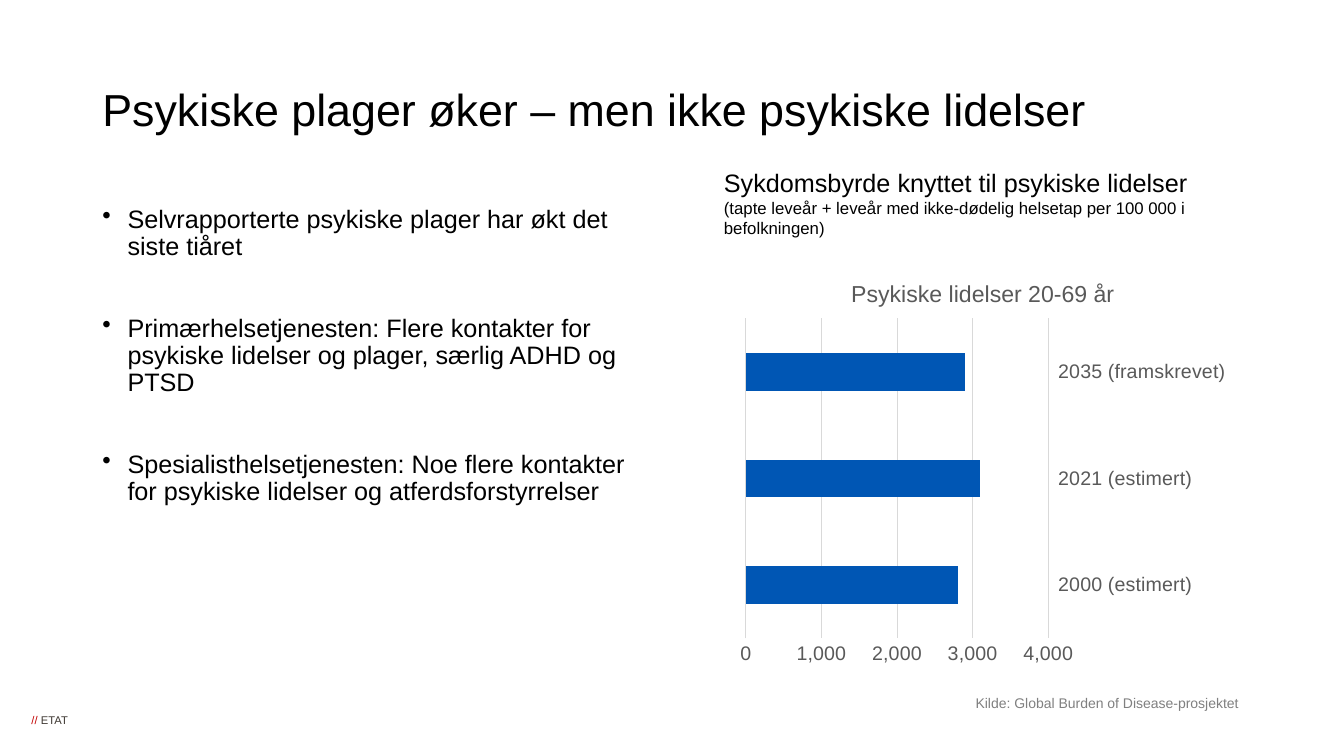
import pptx
import pptx.chart.data
import pptx.dml.color
import pptx.enum.chart
import pptx.enum.text
import pptx.oxml
import pptx.util
from dataclasses import dataclass

Pt = pptx.util.Pt
Color = pptx.dml.color.RGBColor.from_string


@dataclass(frozen=True)
class Theme:
    font: str = "Arial"
    ink: str = "000000"
    axis_ink: str = "595959"
    grid: str = "D9D9D9"
    bar: str = "0056B4"
    source_ink: str = "808080"
    mark: str = "C30000"
    footer_ink: str = "3E3832"
    title: float = 32
    body: float = 18
    chart_title: float = 16.5
    axis: float = 14
    unit: float = 12
    source: float = 10
    footer: float = 8


theme = Theme()


def style(font, size, color):
    font.name = theme.font
    font.size = Pt(size)
    font.bold = False
    font.color.rgb = Color(color)


def add_text(left, top, width, height, lines):
    """Add a wrapping text box; each line is (text, size, color)."""
    box = page.shapes.add_textbox(Pt(left), Pt(top), Pt(width), Pt(height))
    frame = box.text_frame
    frame.word_wrap = True
    for index, (text, size, color) in enumerate(lines):
        para = frame.add_paragraph() if index else frame.paragraphs[0]
        para.text = text
        style(para.font, size, color)
    return frame


deck = pptx.Presentation()
deck.slide_width, deck.slide_height = Pt(960), Pt(540)
page = deck.slides.add_slide(deck.slide_layouts[6])

# Footer mark
footer = add_text(19.5, 509.8, 180.5, 9.4, [("", theme.footer, theme.footer_ink)])
footer.margin_left = Pt(3)
footer.margin_top = footer.margin_right = footer.margin_bottom = 0
for text, color in (("// ", theme.mark), ("ETAT", theme.footer_ink)):
    span = footer.paragraphs[0].add_run()
    span.text = text
    span.font.color.rgb = Color(color)

# Title
title = add_text(66, 38.2, 828, 84.2, [
    ("Psykiske plager øker – men ikke psykiske lidelser", theme.title, theme.ink)])
title.vertical_anchor = pptx.enum.text.MSO_ANCHOR.MIDDLE
title.paragraphs[0].line_spacing = 0.9

# Bullet points
points = page.shapes.add_textbox(Pt(66), Pt(144), Pt(394), Pt(342.7)).text_frame
points.word_wrap = True
for index, text in enumerate((
        "Selvrapporterte psykiske plager har økt det siste tiåret",
        "Primærhelsetjenesten: Flere kontakter for psykiske lidelser og plager, "
        "særlig ADHD og PTSD",
        "Spesialisthelsetjenesten: Noe flere kontakter for psykiske lidelser "
        "og atferdsforstyrrelser")):
    para = points.add_paragraph() if index else points.paragraphs[0]
    para.text = text
    properties = para._p.get_or_add_pPr()
    properties.set("marL", str(Pt(18)))
    properties.set("indent", str(Pt(-18)))
    properties.append(pptx.oxml.parse_xml(
        '<a:buChar xmlns:a="http://schemas.openxmlformats.org/drawingml/2006/main" char="•"/>'))
    para.line_spacing = 0.9
    if index:
        para.space_before = Pt(39)
    style(para.font, theme.body, theme.ink)

# Chart heading and source
add_text(510, 116, 384, 58, [
    ("Sykdomsbyrde knyttet til psykiske lidelser", theme.body, theme.ink),
    ("(tapte leveår + leveår med ikke-dødelig helsetap per 100 000 i befolkningen)",
     theme.unit, theme.ink)])
add_text(689.8, 492.5, 223.2, 19.4, [
    ("Kilde: Global Burden of Disease-prosjektet", theme.source, theme.source_ink)])

# Bar chart
data = pptx.chart.data.CategoryChartData(number_format="#,##0")
data.categories = ["2000 (estimert)", "2021 (estimert)", "2035 (framskrevet)"]
data.add_series("Series 1", [2800, 3100, 2900])
chart = page.shapes.add_chart(
    pptx.enum.chart.XL_CHART_TYPE.BAR_CLUSTERED,
    Pt(522), Pt(186.5), Pt(360), Pt(293), data).chart
style(chart.font, theme.axis, theme.ink)
chart.has_legend = False
chart.has_title = True
heading = chart.chart_title.text_frame
heading.text = "Psykiske lidelser 20-69 år"
style(heading.paragraphs[0].font, theme.chart_title, theme.axis_ink)

plot = chart.plots[0]
plot.gap_width = 182
plot.vary_by_categories = False
bars = plot.series[0].format.fill
bars.solid()
bars.fore_color.rgb = Color(theme.bar)

years, values = chart.category_axis, chart.value_axis
for axis in (years, values):
    style(axis.tick_labels.font, theme.axis, theme.axis_ink)
    axis.major_tick_mark = pptx.enum.chart.XL_TICK_MARK.NONE
    axis.minor_tick_mark = pptx.enum.chart.XL_TICK_MARK.NONE
years.tick_label_position = pptx.enum.chart.XL_TICK_LABEL_POSITION.HIGH
values.format.line.fill.background()
values.minimum_scale, values.maximum_scale, values.major_unit = 0, 4000, 1000
values.tick_labels.number_format = "#,##0"
values.tick_labels.number_format_is_linked = False
for line in (years.format.line, values.major_gridlines.format.line):
    line.color.rgb = Color(theme.grid)
    line.width = Pt(0.75)

# Fixed plot area, as shares of the chart
area = chart._chartSpace.chart.plotArea
for old in area.findall("{*}layout"):
    area.remove(old)
shares = "".join(f'<c:{name} val="{share}"/>' for name, share in (
    ("x", 0.03), ("y", 0.14), ("w", 0.6), ("h", 0.78)))
area.insert(0, pptx.oxml.parse_xml(
    '<c:layout xmlns:c="http://schemas.openxmlformats.org/drawingml/2006/chart">'
    '<c:manualLayout><c:layoutTarget val="inner"/><c:xMode val="edge"/>'
    f'<c:yMode val="edge"/>{shares}</c:manualLayout></c:layout>'))

deck.save("out.pptx")
